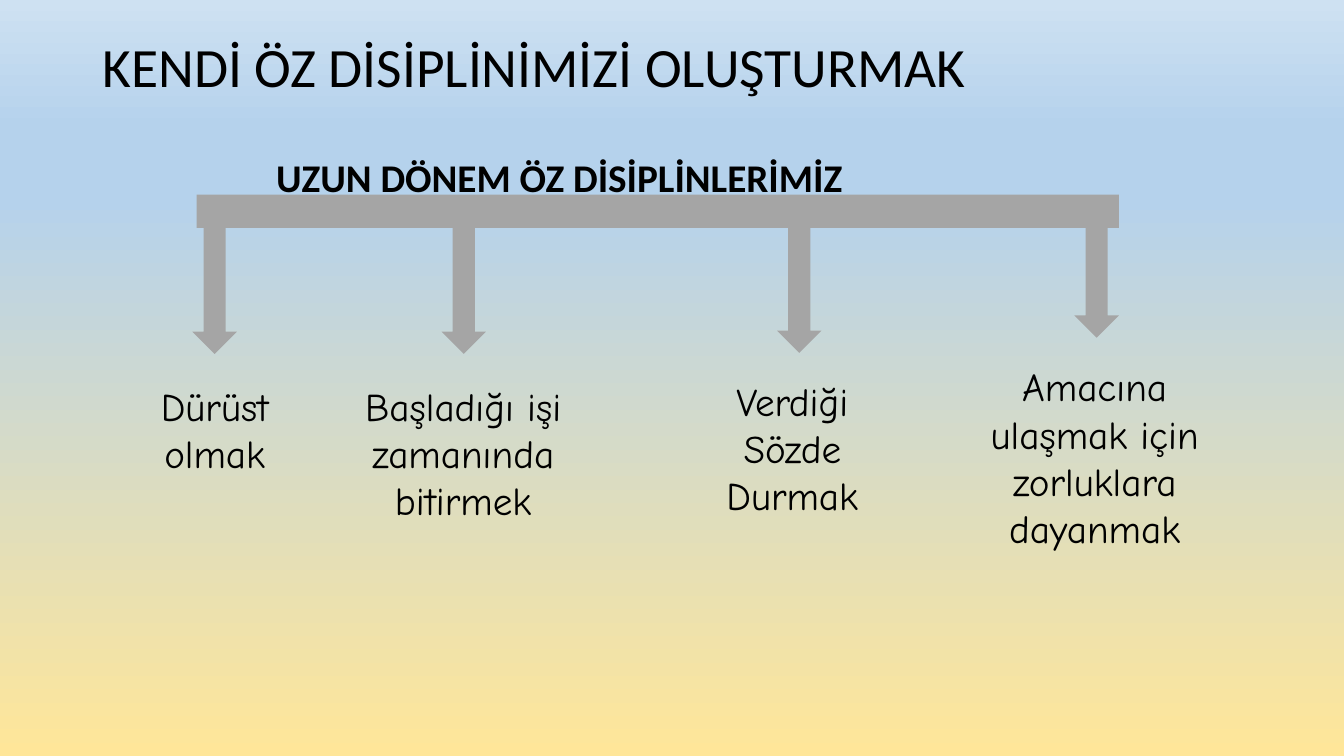
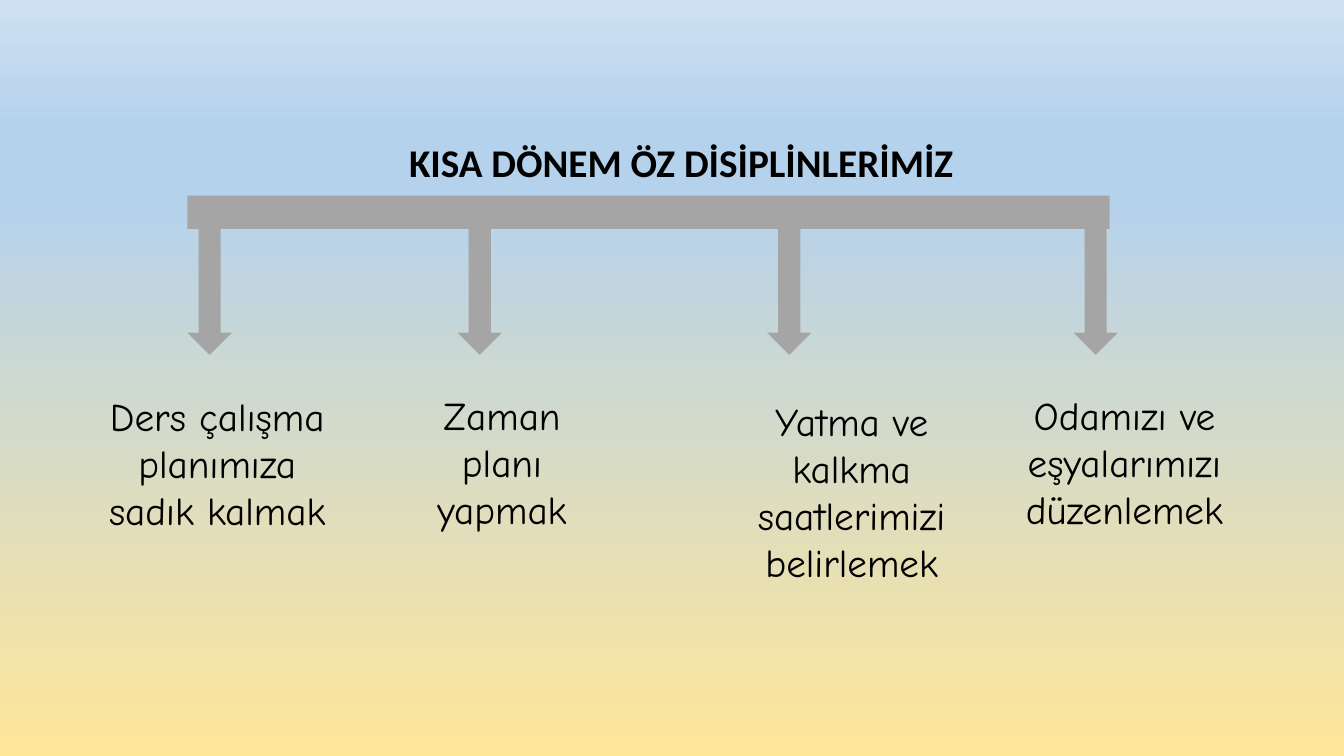
"""Build two slides on long-term and short-term self-discipline."""
from dataclasses import dataclass

from lxml.etree import SubElement
from pptx import Presentation
from pptx.dml.color import RGBColor
from pptx.enum.shapes import MSO_SHAPE
from pptx.enum.text import MSO_AUTO_SIZE, PP_ALIGN
from pptx.oxml.ns import qn
from pptx.slide import Slide
from pptx.util import Pt

BLACK = RGBColor(0x00, 0x00, 0x00)
GRAY = RGBColor(0xA5, 0xA5, 0xA5)
SAND = RGBColor(0xFF, 0xE6, 0x99)
SKY = RGBColor(0xB5, 0xD2, 0xEC)
PALE_SKY = RGBColor(0xCE, 0xE1, 0xF2)
BACKGROUND_STOPS = ((0, SAND), (74, SKY), (83, SKY), (100, PALE_SKY))

TITLE_FONT = {"name": "Calibri", "size": Pt(39.6)}
HEADING_FONT = {"name": "Calibri", "size": Pt(28), "bold": True}
LABEL_FONT = {"name": "Comic Neue", "size": Pt(28)}

BAR_WIDTH, BAR_HEIGHT = 658.8, 23.8
ARROW_WIDTH, ARROW_HEIGHT = 31.7, 90
LINE_HEIGHT, TEXT_PADDING = 33.9, 7.2


@dataclass(frozen=True)
class Box:
    left: float
    top: float
    width: float
    height: float


@dataclass(frozen=True)
class Branch:
    arrow_left: float
    arrow_top: float
    text: str
    left: float
    top: float
    width: float
    lines: int


@dataclass(frozen=True)
class Diagram:
    heading: str
    heading_box: Box
    bar_left: float
    bar_top: float
    branches: tuple[Branch, ...]
    title: str = ""


DIAGRAMS = (
    Diagram(
        "UZUN DÖNEM ÖZ DİSİPLİNLERİMİZ", Box(190.1, 105.8, 450, 41), 140.4, 139,
        (
            Branch(137.5, 162.8, "Dürüst olmak", 82.8, 269.3, 141.1, 2),
            Branch(315.4, 162.8, "Başladığı işi zamanında bitirmek", 233.3, 269.3, 195.1, 3),
            Branch(555.1, 162, "Verdiği Sözde Durmak", 495.4, 265.7, 141.1, 3),
            Branch(767.5, 151.2, "Amacına ulaşmak için zorluklara dayanmak", 676.1, 255.6, 211.7, 4),
        ),
        title="KENDİ ÖZ DİSİPLİNİMİZİ OLUŞTURMAK",
    ),
    Diagram(
        "KISA DÖNEM ÖZ DİSİPLİNLERİMİZ", Box(285.1, 95, 410, 41), 133.9, 139.7,
        (
            Branch(133.9, 163.5, "Ders çalışma planımıza sadık kalmak", 64.1, 276.5, 182.2, 3),
            Branch(326.9, 163.5, "Zaman planı yapmak", 293.8, 275.8, 129.6, 3),
            Branch(547.9, 163.5, "Yatma ve kalkma saatlerimizi belirlemek", 512.6, 280.1, 191.5, 4),
            Branch(766.8, 163.5, "Odamızı ve eşyalarımızı düzenlemek", 690.5, 275.8, 225.4, 3),
        ),
    ),
)


def set_background(prs: Presentation) -> None:
    master = prs.slide_master
    fill = master.background.fill
    fill.gradient()
    fill.gradient_angle = 90
    stops = master.element.find(".//" + qn("p:bg")).find(".//" + qn("a:gsLst"))
    for stop in list(stops):
        stops.remove(stop)
    for percent, color in BACKGROUND_STOPS:
        stop = SubElement(stops, qn("a:gs"), pos=str(percent * 1000))
        SubElement(stop, qn("a:srgbClr"), val=str(color))


def add_text(s: Slide, text: str, box: Box, font: dict,
             align: PP_ALIGN = PP_ALIGN.LEFT, spacing: float = 1.0) -> None:
    sp = s.shapes.add_textbox(Pt(box.left), Pt(box.top), Pt(box.width), Pt(box.height))
    tf = sp.text_frame
    tf.word_wrap = True
    tf.auto_size = MSO_AUTO_SIZE.SHAPE_TO_FIT_TEXT
    p = tf.paragraphs[0]
    p.alignment = align
    p.line_spacing = spacing
    r = p.add_run()
    r.text = text
    for name, value in font.items():
        setattr(r.font, name, value)
    r.font.color.rgb = BLACK


def add_block(s: Slide, kind: MSO_SHAPE, box: Box) -> None:
    sp = s.shapes.add_shape(kind, Pt(box.left), Pt(box.top), Pt(box.width), Pt(box.height))
    sp.shadow.inherit = False
    sp.fill.solid()
    sp.fill.fore_color.rgb = GRAY
    sp.line.fill.background()


def add_branch(s: Slide, branch: Branch) -> None:
    add_block(s, MSO_SHAPE.DOWN_ARROW,
              Box(branch.arrow_left, branch.arrow_top, ARROW_WIDTH, ARROW_HEIGHT))
    height = branch.lines * LINE_HEIGHT + TEXT_PADDING
    add_text(s, branch.text, Box(branch.left, branch.top, branch.width, height),
             LABEL_FONT, PP_ALIGN.CENTER)


def add_diagram(prs: Presentation, diagram: Diagram) -> None:
    s = prs.slides.add_slide(prs.slide_layouts[6])
    if diagram.title:
        add_text(s, diagram.title, Box(66.2, 24.5, 828, 51), TITLE_FONT, spacing=0.9)
    add_text(s, diagram.heading, diagram.heading_box, HEADING_FONT)
    add_block(s, MSO_SHAPE.RECTANGLE,
              Box(diagram.bar_left, diagram.bar_top, BAR_WIDTH, BAR_HEIGHT))
    for branch in diagram.branches:
        add_branch(s, branch)


def main() -> None:
    prs = Presentation()
    prs.slide_width, prs.slide_height = Pt(960), Pt(540)
    set_background(prs)
    for diagram in DIAGRAMS:
        add_diagram(prs, diagram)
    prs.save("out.pptx")


if __name__ == "__main__":
    main()
